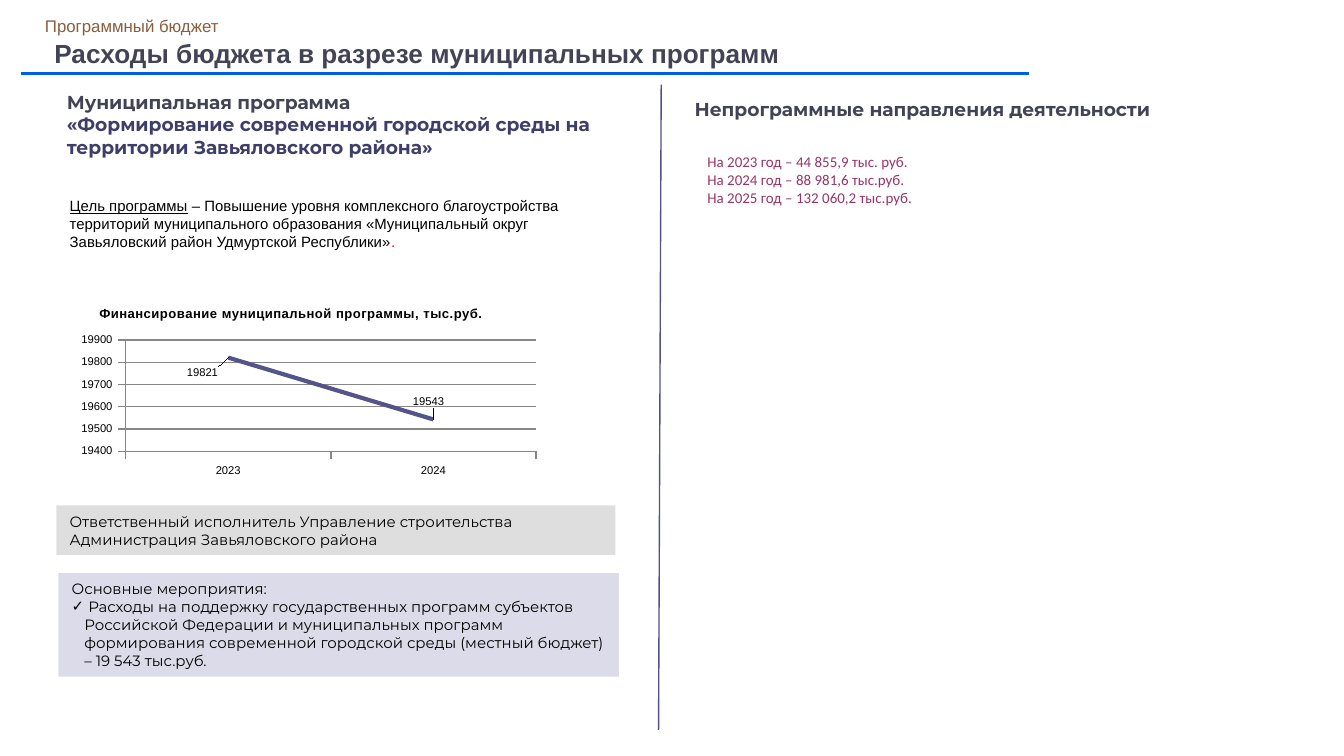
from dataclasses import dataclass
from typing import Any, Optional

from lxml.etree import SubElement
from pptx import Presentation
from pptx.chart.data import CategoryChartData
from pptx.dml.color import RGBColor
from pptx.enum.chart import XL_CHART_TYPE, XL_LABEL_POSITION, XL_TICK_MARK
from pptx.enum.shapes import MSO_CONNECTOR, MSO_SHAPE
from pptx.enum.text import MSO_ANCHOR, MSO_AUTO_SIZE
from pptx.oxml import parse_xml
from pptx.oxml.ns import nsdecls, qn
from pptx.util import Emu, Pt

EMU_PER_PX = 4572


@dataclass(frozen=True)
class Theme:
    sans: str = "Arial"
    display: str = "Montserrat"
    figures: str = "Calibri"
    heading: str = "424456"
    programme: str = "3E3F68"
    section: str = "8B5D3D"
    amounts: str = "993366"
    ink: str = "000000"
    accent: str = "FF0000"
    rule: str = "005EE4"
    divider: str = "505188"
    trend: str = "53548A"
    grid: str = "868686"
    executor_fill: str = "DEDEDE"
    activities_fill: str = "DBDBE9"
    edge: str = "FFFFFF"
    title_size: int = 14
    heading_size: int = 10
    section_size: int = 9
    body_size: int = 8
    chart_title_size: int = 7
    chart_size: int = 6


@dataclass(frozen=True)
class Span:
    text: str
    color: str
    underline: bool = False


@dataclass(frozen=True)
class Block:
    box: tuple[int, int, int, int]
    paragraphs: list[list[Span]]
    font: str
    size: int
    bold: bool = False
    fill: Optional[str] = None
    anchor: MSO_ANCHOR = MSO_ANCHOR.TOP
    insets: tuple[int, int] = (20, 10)
    grow: bool = True
    spacing: Optional[float] = None
    hanging: int = 0
    bulleted: tuple[int, ...] = ()


THEME = Theme()

BLOCKS = [
    Block((67, 45, 1800, 74),
          [[Span("Расходы бюджета в разрезе муниципальных программ", THEME.heading)]],
          THEME.sans, THEME.title_size, bold=True, anchor=MSO_ANCHOR.MIDDLE,
          insets=(14, 7), grow=False, spacing=0.9),
    Block((53, 17, 392, 46), [[Span("Программный бюджет", THEME.section)]],
          THEME.sans, THEME.section_size, insets=(14, 7), grow=False),
    Block((87, 853, 834, 154),
          [[Span("Основные мероприятия:", THEME.ink)],
           [Span(" Расходы на поддержку государственных программ субъектов "
                 "Российской Федерации и муниципальных программ формирования "
                 "современной городской среды (местный бюджет) – 19 543 тыс.руб.",
                 THEME.ink)]],
          THEME.display, THEME.body_size, fill=THEME.activities_fill,
          hanging=19, bulleted=(1,)),
    Block((80, 125, 886, 122),
          [[Span("Муниципальная программа", THEME.heading)],
           [Span("«Формирование современной городской среды на территории "
                 "Завьяловского района»", THEME.programme)]],
          THEME.display, THEME.heading_size, bold=True),
    Block((84, 283, 832, 128),
          [[Span("Цель программы", THEME.ink, underline=True),
            Span(" – Повышение уровня комплексного благоустройства территорий "
                 "муниципального образования «Муниципальный округ Завьяловский "
                 "район Удмуртской Республики»", THEME.ink),
            Span(".", THEME.accent)]],
          THEME.sans, THEME.body_size, grow=False),
    Block((84, 752, 832, 74),
          [[Span("Ответственный исполнитель Управление строительства "
                 "Администрация Завьяловского района", THEME.ink)]],
          THEME.display, THEME.body_size, fill=THEME.executor_fill,
          anchor=MSO_ANCHOR.MIDDLE),
    Block((1014, 136, 1006, 54),
          [[Span("Непрограммные направления деятельности", THEME.heading)]],
          THEME.display, THEME.heading_size, bold=True),
    Block((1033, 217, 858, 100),
          [[Span(f"На {year} год – {amount}", THEME.amounts)] for year, amount in (
              (2023, "44 855,9 тыс. руб."),
              (2024, "88 981,6 тыс.руб."),
              (2025, "132 060,2 тыс.руб."))],
          THEME.figures, THEME.body_size),
]


def px(length: int) -> Emu:
    return Emu(length * EMU_PER_PX)


def rgb(color: str) -> RGBColor:
    return RGBColor.from_string(color)


def apply(target: Any, values: dict[str, Any]) -> None:
    for name, value in values.items():
        setattr(target, name, value)


def style_font(font: Any, name: str, size: int, color: str, **extra: Any) -> None:
    apply(font, {"name": name, "size": Pt(size), **extra})
    font.color.rgb = rgb(color)


def style_line(line: Any, color: str, width: float = 0.75) -> None:
    line.color.rgb = rgb(color)
    line.width = Pt(width)


def add_panel(slide: Any, box: tuple[int, int, int, int], fill: str) -> Any:
    panel = slide.shapes.add_shape(MSO_SHAPE.RECTANGLE, *map(px, box))
    panel.shadow.inherit = False
    panel.fill.solid()
    panel.fill.fore_color.rgb = rgb(fill)
    panel.line.fill.background()
    return panel


def add_block(slide: Any, block: Block) -> None:
    if block.fill:
        holder = add_panel(slide, block.box, block.fill)
    else:
        holder = slide.shapes.add_textbox(*map(px, block.box))
    frame = holder.text_frame
    side, edge = map(px, block.insets)
    apply(frame, {
        "word_wrap": True,
        "auto_size": MSO_AUTO_SIZE.SHAPE_TO_FIT_TEXT if block.grow else MSO_AUTO_SIZE.NONE,
        "vertical_anchor": block.anchor,
        "margin_left": side, "margin_right": side,
        "margin_top": edge, "margin_bottom": edge,
    })
    for index, spans in enumerate(block.paragraphs):
        paragraph = frame.add_paragraph() if index else frame.paragraphs[0]
        properties = paragraph._p.get_or_add_pPr()
        properties.set("algn", "l")
        if block.spacing:
            paragraph.line_spacing = block.spacing
        if block.hanging:
            properties.set("marL", str(px(block.hanging)))
            properties.set("indent", str(-px(block.hanging)))
        if index in block.bulleted:
            SubElement(properties, qn("a:buFont")).set("typeface", THEME.sans)
            SubElement(properties, qn("a:buChar")).set("char", "✓")
        for span in spans:
            run = paragraph.add_run()
            run.text = span.text
            style_font(run.font, block.font, block.size, span.color,
                       bold=block.bold, underline=span.underline)


def add_divider(slide: Any, start: tuple[int, int], end: tuple[int, int]) -> None:
    divider = slide.shapes.add_connector(MSO_CONNECTOR.STRAIGHT, *map(px, start + end))
    style_line(divider.line, THEME.divider)
    SubElement(divider._element.spPr, qn("a:effectLst"))


def manual_layout(**values: Any) -> Any:
    entries = "".join(f'<c:{name} val="{value}"/>' for name, value in values.items())
    return parse_xml(f'<c:layout {nsdecls("c")}><c:manualLayout>{entries}'
                     '</c:manualLayout></c:layout>')


def hidden_leader_lines() -> Any:
    return parse_xml(
        f'<c:extLst {nsdecls("c")}><c:ext uri="{{CE6537A1-D6FC-4f65-9D91-7224C49458BB}}" '
        'xmlns:c15="http://schemas.microsoft.com/office/drawing/2012/chart">'
        '<c15:showLeaderLines val="0"/></c:ext></c:extLst>')


def add_funding_chart(slide: Any, box: tuple[int, int, int, int]) -> None:
    funding = CategoryChartData(number_format="General")
    funding.categories = ["2023", "2024"]
    funding.add_series("Series 1", (19821, 19543))
    chart = slide.shapes.add_chart(XL_CHART_TYPE.LINE, *map(px, box), funding).chart
    apply(chart, {"has_legend": False, "has_title": True})
    style_font(chart.font, THEME.sans, THEME.chart_size, THEME.ink)
    heading = chart.chart_title.text_frame.paragraphs[0].add_run()
    heading.text = "Финансирование муниципальной программы, тыс.руб."
    style_font(heading.font, THEME.sans, THEME.chart_title_size, THEME.ink, bold=True)
    heading.font._element.set("spc", "40")

    amounts, years = chart.value_axis, chart.category_axis
    apply(amounts, {"minimum_scale": 19400, "maximum_scale": 19900,
                    "major_unit": 100, "has_major_gridlines": True})
    for axis in (amounts, years):
        axis.major_tick_mark = XL_TICK_MARK.OUTSIDE
    for part in (amounts, years, amounts.major_gridlines):
        style_line(part.format.line, THEME.grid)

    plot = chart.plots[0]
    plot.vary_by_categories = False
    trend = plot.series[0]
    trend.smooth = False
    style_line(trend.format.line, THEME.trend, 2.25)
    trend.data_labels.show_value = True
    placements = ((XL_LABEL_POSITION.LEFT, -0.01, 0.08),
                  (XL_LABEL_POSITION.ABOVE, -0.01, -0.03))
    for index, (side, _, _) in enumerate(placements):
        trend.points[index].data_label.position = side
    labels = trend.data_labels._element
    for label, (_, x, y) in zip(labels.findall(qn("c:dLbl")), placements):
        label.insert(1, manual_layout(x=x, y=y))
    labels.append(hidden_leader_lines())

    area = chart._chartSpace.chart.plotArea
    for layout in area.findall(qn("c:layout")):
        area.remove(layout)
    area.insert(0, manual_layout(layoutTarget="inner", xMode="edge", yMode="edge",
                                 x=0.165, y=0.247, w=0.832, h=0.575))


def main() -> None:
    deck = Presentation()
    apply(deck, {"slide_width": px(2000), "slide_height": px(1125)})
    slide = deck.slides.add_slide(deck.slide_layouts[6])
    title_rule = add_panel(slide, (30, 106, 1502, 7), THEME.rule)
    style_line(title_rule.line, THEME.edge)
    for block in BLOCKS:
        add_block(slide, block)
    add_funding_chart(slide, (66, 435, 734, 288))
    add_divider(slide, (984, 126), (980, 1086))
    deck.save("out.pptx")


if __name__ == "__main__":
    main()
